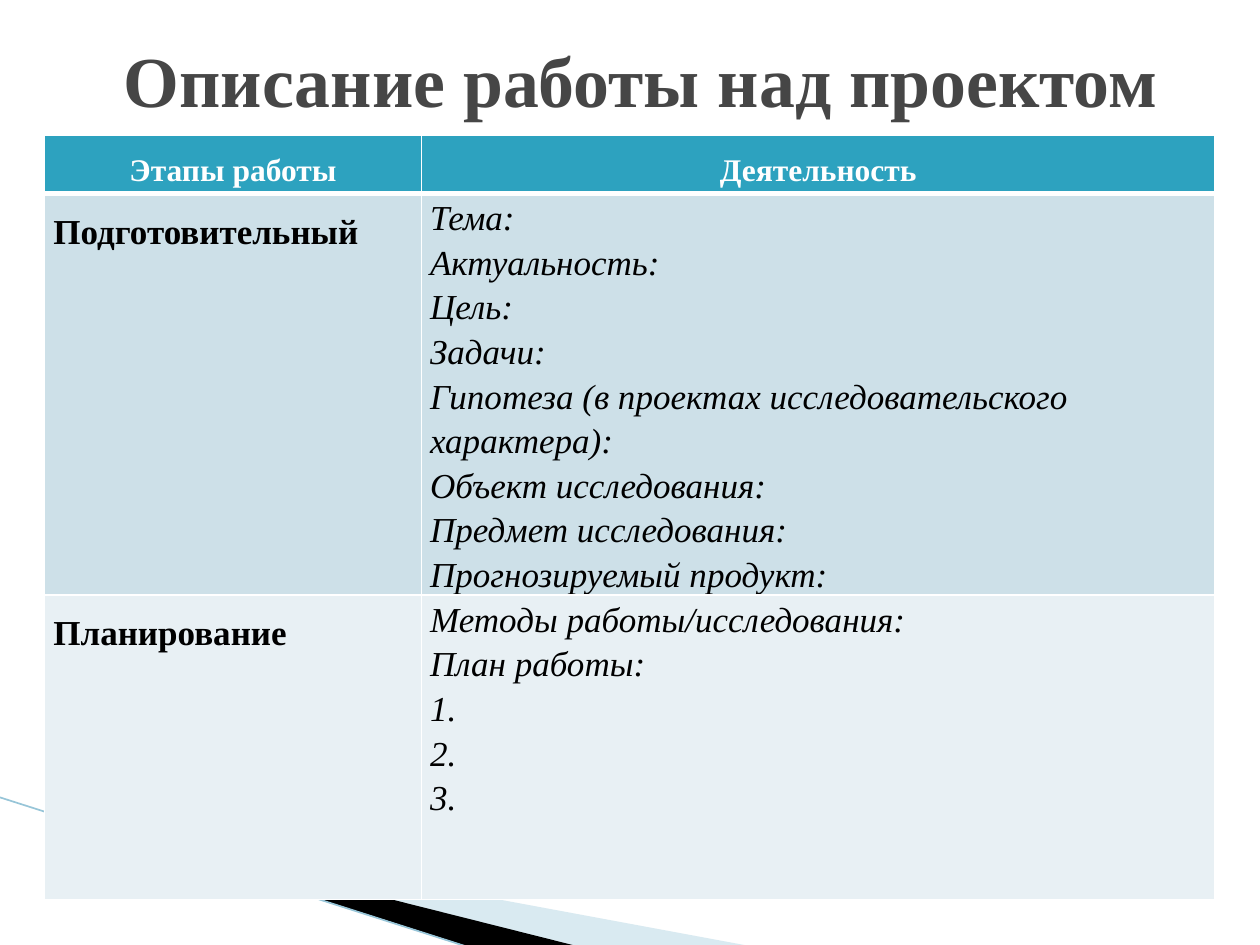
"""Build the slide that outlines the stages of project work."""
from lxml.etree import SubElement as Sub
from pptx import Presentation as Deck
from pptx.dml.color import RGBColor as Color
from pptx.enum.shapes import MSO_CONNECTOR as Link
from pptx.enum.text import MSO_ANCHOR as Anchor, PP_ALIGN as Align
from pptx.oxml import parse_xml
from pptx.oxml.ns import nsdecls, qn
from pptx.util import Pt

WHITE = Color(0xFF, 0xFF, 0xFF)
BLACK = Color(0, 0, 0)
GRAY = Color(0x46, 0x46, 0x46)
TEAL = Color(0x2D, 0xA2, 0xBF)
BLUE = Color(0xCD, 0xE0, 0xE8)
PALE = Color(0xE8, 0xF0, 0xF4)
SKY = Color(0xA0, 0xCB, 0xDC)
EDGE = Color(0x97, 0xC5, 0xD8)

HEAD = {"size": Pt(18), "bold": True, "color": WHITE}
STAGE = {"size": Pt(20), "bold": True, "color": BLACK}
TASK = {"size": Pt(20), "bold": False, "italic": True, "color": BLACK}

ROWS = [
    (["Этапы работы"], ["Деятельность"]),
    (["Подготовительный"],
     ["Тема:", "Актуальность:", "Цель:", "Задачи:",
      "Гипотеза (в проектах исследовательского характера):",
      "Объект исследования:", "Предмет исследования:",
      "Прогнозируемый продукт:"]),
    (["Планирование"],
     ["Методы работы/исследования:", "План работы:", "1.", "2.", "3."]),
]


class Page:
    """Hold the style and the current slide."""
    face = "Times New Roman"

    def __init__(self, deck):
        self.slide = deck.slides.add_slide(deck.slide_layouts[5])
        self.shapes = self.slide.shapes

    def text(self, frame, lines, form, align, space):
        frame.text = "\n".join(lines)
        for para in frame.paragraphs:
            para.alignment, para.line_spacing = align, space
            font = para.runs[0].font
            for key, val in {"name": self.face, **form}.items():
                if key == "color":
                    font.color.rgb = val
                else:
                    setattr(font, key, val)

    def title(self, text, box, form):
        shape = self.shapes.title
        for key, val in zip(("left", "top", "width", "height"), box):
            setattr(shape, key, Pt(val))
        shape.text_frame.vertical_anchor = Anchor.MIDDLE
        self.text(shape.text_frame, [text], form, Align.CENTER, 1)

    def wedge(self, first, rest, color, alpha=None):
        pen = self.shapes.build_freeform(*map(Pt, first), scale=1.0)
        pen.add_line_segments([tuple(map(Pt, dot)) for dot in rest])
        shape = pen.convert_to_shape()
        shape.shadow.inherit = False
        shape.fill.solid()
        shape.fill.fore_color.rgb = color
        shape.line.fill.background()
        if alpha:
            tone = shape._element.spPr.find(".//" + qn("a:srgbClr"))
            Sub(tone, qn("a:alpha"), val=str(alpha * 1000))

    def line(self, start, end, color, width):
        line = self.shapes.add_connector(
            Link.STRAIGHT, *map(Pt, start + end))
        line.line.color.rgb, line.line.width = color, Pt(width)
        Sub(line._element.spPr, qn("a:effectLst"))

    def border(self, cell, sides):
        props = cell._tc.get_or_add_tcPr()
        for spot, (side, width) in enumerate(sides.items()):
            props.insert(spot, parse_xml(
                f'<a:ln{side} {nsdecls("a")} w="{Pt(width)}"><a:solidFill>'
                f'<a:srgbClr val="{WHITE}"/></a:solidFill></a:ln{side}>'))

    def cell(self, cell, lines, form, color, align, space, sides):
        for key, val in {"margin_left": Pt(5), "margin_right": Pt(5),
                         "margin_top": 0, "margin_bottom": 0}.items():
            setattr(cell, key, val)
        cell.fill.solid()
        cell.fill.fore_color.rgb = color
        self.border(cell, sides)
        self.text(cell.text_frame, lines, form, align, space)

    def table(self, rows, left, top, wide, high):
        grid = self.shapes.add_table(
            len(rows), len(wide), Pt(left), Pt(top),
            Pt(sum(wide)), Pt(sum(high))).table
        for col, val in zip(grid.columns, wide):
            col.width = Pt(val)
        for row, val in zip(grid.rows, high):
            row.height = Pt(val)
        for r, (row, color) in enumerate(zip(rows, (TEAL, BLUE, PALE))):
            sides = {"L": 1, "R": 1, "T": 3 if r == 1 else 1,
                     "B": 3 if r == 0 else 1}
            for c, lines in enumerate(row):
                form = (STAGE, TASK)[c] if r else HEAD
                align = Align.LEFT if r else Align.CENTER
                space = 1.15 if r and c else 1.5
                self.cell(grid.cell(r, c), lines, form, color,
                          align, space, sides)


def main():
    deck = Deck()
    deck.slide_width, deck.slide_height = Pt(720), Pt(540)
    page = Page(deck)
    page.wedge((39.6, 468.5), [(428, 540.5), (328, 540.5), (39.6, 468)],
               SKY, 40)
    page.wedge((38.2, 467.3), [(329, 540.5), (268, 541), (38.9, 468)], BLACK)
    page.line((-0.5, 455.5), (267, 541), EDGE, 0.95)
    page.table(ROWS, 25.5, 77.5, (215.3, 453.6), (33, 229, 174))
    page.title("Описание работы над проектом", (42.5, 0, 648, 90),
               {"size": Pt(41), "bold": True, "color": GRAY})
    deck.save("out.pptx")


if __name__ == "__main__":
    main()
